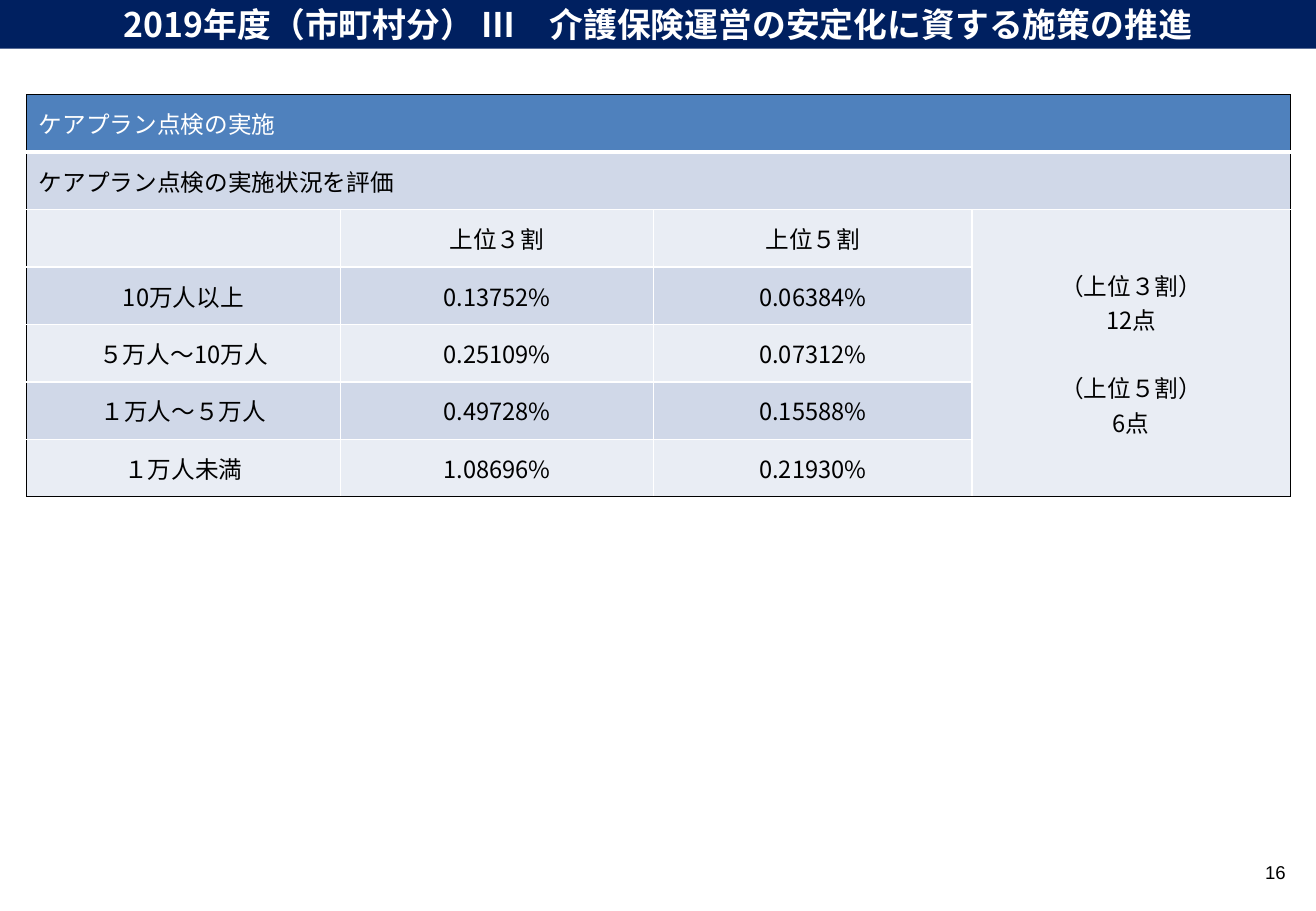
from dataclasses import dataclass

from lxml import etree
from pptx import Presentation
from pptx import util as u
from pptx.dml.color import RGBColor
from pptx.enum import text
from pptx.oxml.ns import qn

ALIGN = text.PP_ALIGN


@dataclass(frozen=True)
class Theme:
    navy: str = "002060"
    blue: str = "4F81BD"
    dark: str = "D0D8E8"
    pale: str = "E9EDF4"
    white: str = "FFFFFF"
    black: str = "000000"
    sans: str = "Noto Sans CJK JP"
    latin: str = "Calibri"
    plain: str = "Arial"
    head: int = 20
    cell: int = 14
    gap: int = 20
    note: int = 11


class Deck:
    def __init__(self, theme, width, height):
        self.theme = theme
        self.prs = Presentation()
        self.prs.slide_width = u.Inches(width)
        self.prs.slide_height = u.Inches(height)
        self.slide = self.prs.slides.add_slide(self.prs.slide_layouts[5])

    def run(self, para, words, color, **form):
        run = para.add_run()
        run.text = words
        for key, value in form.items():
            setattr(run.font, key, value)
        run.font.color.rgb = RGBColor.from_string(color)
        east = etree.SubElement(run.font._element, qn("a:ea"))
        east.set("typeface", self.theme.sans)

    def place(self, shape, box):
        for key, value in zip(("left", "top", "width", "height"), box):
            setattr(shape, key, u.Inches(value))

    def title(self, box, parts):
        """Fill the title bar with (words, font) parts."""
        bar = self.slide.shapes.title
        self.place(bar, box)
        bar.fill.solid()
        bar.fill.fore_color.rgb = RGBColor.from_string(self.theme.navy)
        frame = bar.text_frame
        form = {"auto_size": text.MSO_AUTO_SIZE.NONE, "word_wrap": True,
                "vertical_anchor": text.MSO_ANCHOR.MIDDLE}
        for key, value in form.items():
            setattr(frame, key, value)
        para = frame.paragraphs[0]
        para.alignment = ALIGN.CENTER
        for words, font in parts:
            self.run(para, words, self.theme.white, name=font,
                     size=u.Pt(self.theme.head), bold=True)

    def label(self, box, words):
        frame = self.slide.shapes.add_textbox(*map(u.Inches, box)).text_frame
        frame.word_wrap = True
        frame.vertical_anchor = text.MSO_ANCHOR.MIDDLE
        para = frame.paragraphs[0]
        para.alignment = ALIGN.RIGHT
        self.run(para, words, self.theme.black, name=self.theme.plain,
                 size=u.Pt(self.theme.note))

    def edge(self, cell, sides):
        """Draw cell borders from (tag, colour, points) sides."""
        props = cell._tc.get_or_add_tcPr()
        for spot, (tag, color, size) in enumerate(sides):
            line = etree.Element(qn(f"a:{tag}"), w=str(u.Pt(size)))
            fill = etree.SubElement(line, qn("a:solidFill"))
            etree.SubElement(fill, qn("a:srgbClr"), val=color)
            props.insert(spot, line)

    def cell(self, cell, words, fill, color, align):
        cell.fill.solid()
        cell.fill.fore_color.rgb = RGBColor.from_string(fill)
        cell.vertical_anchor = text.MSO_ANCHOR.MIDDLE
        gap = False
        frame = cell.text_frame
        for block in filter(None, words.split("\n\n")):
            for spot, line in enumerate(block.split("\n")):
                first = not gap and spot == 0
                para = frame.paragraphs[0] if first else frame.add_paragraph()
                para.alignment = align
                if gap and spot == 0:
                    para.space_before = u.Pt(self.theme.gap)
                self.run(para, line, color, name=self.theme.sans,
                         size=u.Pt(self.theme.cell))
            gap = True

    def table(self, box, widths, rows, merges):
        look = self.theme
        last, end = len(rows), len(widths)
        grid = self.slide.shapes.add_table(
            last, end, *map(u.Inches, box)).table
        for col, width in zip(grid.columns, widths):
            col.width = u.Inches(width)
        for start, stop in merges:
            grid.cell(*start).merge(grid.cell(*stop))
        for r, row in enumerate(rows):
            fill = look.blue if r == 0 else (look.pale, look.dark)[r % 2]
            color = look.white if r == 0 else look.black
            align = ALIGN.LEFT if r < 2 else ALIGN.CENTER
            for c in range(end):
                cell = grid.cell(r, c)
                words = row[c] if c < len(row) else ""
                self.cell(cell, words, fill, color, align)
                right = c + cell.span_width == end
                low = r + cell.span_height == last
                tone = {True: look.black, False: look.white}
                self.edge(cell, (("lnL", tone[c == 0], 1),
                                 ("lnR", tone[right], 1),
                                 ("lnT", tone[r == 0], 3 if r == 1 else 1),
                                 ("lnB", tone[low], 3 if r == 0 else 1)))


ROWS = (
    ("ケアプラン点検の実施",),
    ("ケアプラン点検の実施状況を評価",),
    ("", "上位３割", "上位５割", "（上位３割）\n12点\n\n（上位５割）\n6点"),
    ("10万人以上", "0.13752%", "0.06384%"),
    ("５万人～10万人", "0.25109%", "0.07312%"),
    ("１万人～５万人", "0.49728%", "0.15588%"),
    ("１万人未満", "1.08696%", "0.21930%"),
)
MERGES = (((0, 0), (0, 3)), ((1, 0), (1, 3)), ((2, 3), (6, 3)))


def main():
    theme = Theme()
    deck = Deck(theme, 10.83, 7.5)
    deck.table((0.22, 0.78, 10.4, 3.31), (2.58, 2.58, 2.62, 2.62),
               ROWS, MERGES)
    deck.label((8.15, 6.98, 2.53, 0.4), "16")
    deck.title((0, 0, 10.83, 0.4), (
        ("2019年度（市町村分） ", theme.sans),
        ("Ⅲ　介護保険運営の安定化に資する施策の推進", theme.latin)))
    deck.prs.save("out.pptx")


if __name__ == "__main__":
    main()
